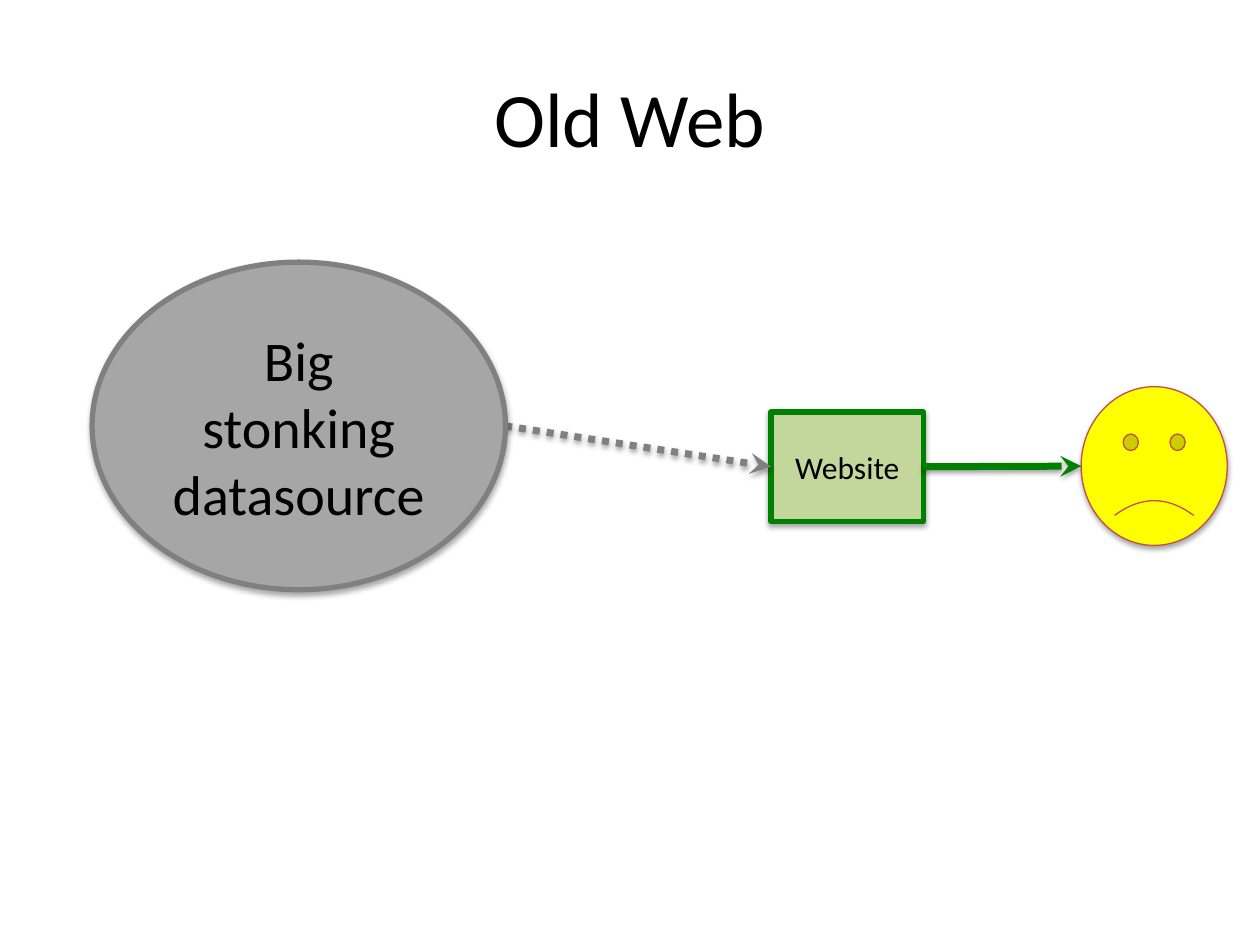
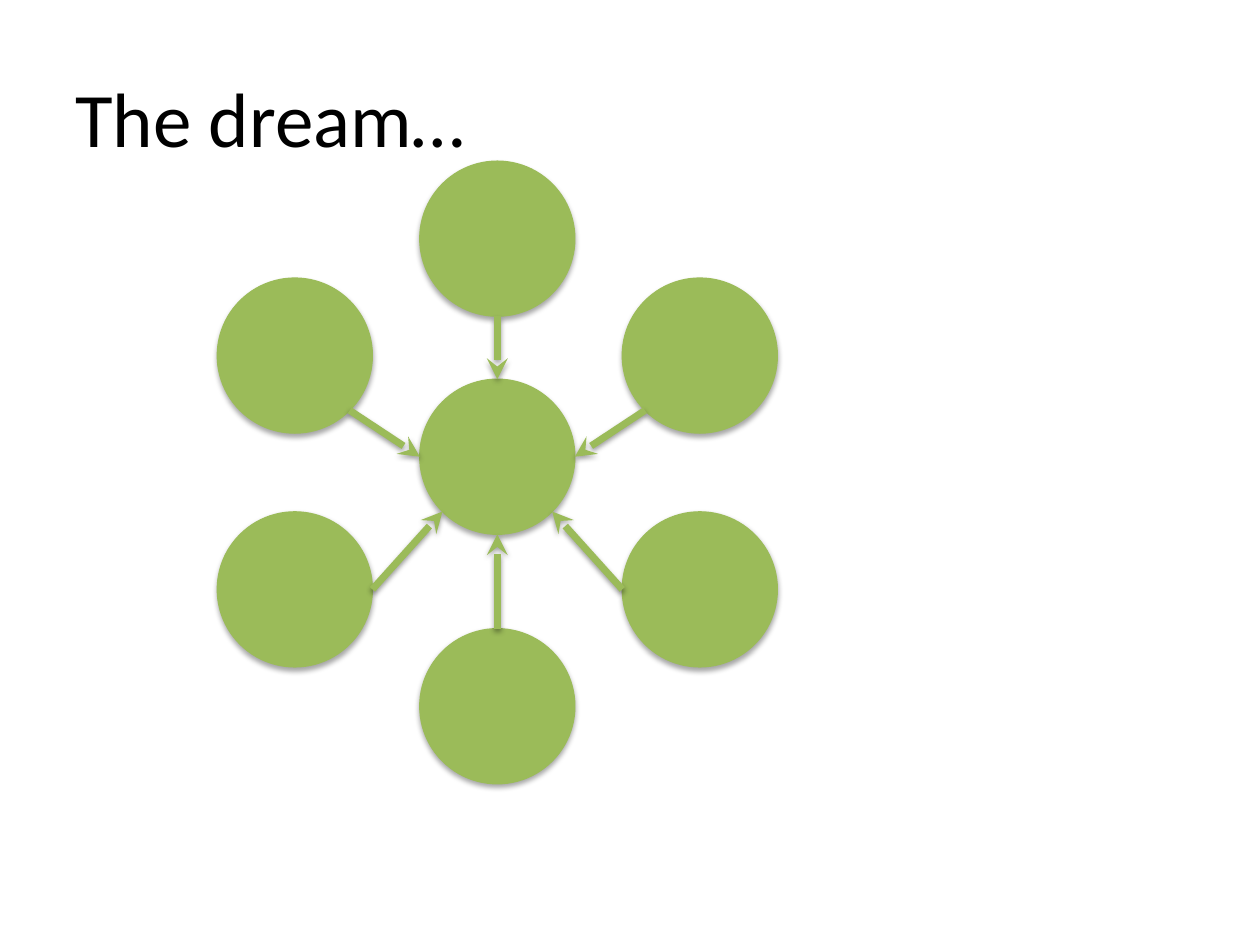
from math import cos, radians, sin

from lxml.etree import SubElement
from pptx import Presentation
from pptx.dml.color import RGBColor
from pptx.enum.dml import MSO_LINE
from pptx.enum.shapes import MSO_CONNECTOR, MSO_SHAPE
from pptx.enum.text import MSO_ANCHOR, PP_ALIGN
from pptx.oxml.ns import qn
from pptx.util import Pt

FONT = "Calibri"
COLORS = {
    "text": "000000",
    "source": "A6A6A6",
    "source_edge": "808080",
    "website": "C3D69B",
    "website_edge": "008000",
    "face": "FFFF00",
    "face_edge": "C0504D",
    "node": "9BBB59",
}

# Ring of nodes around a hub that sits a little above the ring's centre
RING_X, RING_Y, RING_RADIUS = 284.2, 270, 133.6
HUB = (RING_X, 261)
NODE_RADIUS = 44.3
# Clockwise degrees from the right: node on ring, arrow start on node, arrow end on hub
SPOKES = [
    (-90, 90, -90),
    (-30, 135, 0),
    (30, 180, 45),
    (90, -90, 90),
    (150, 0, 135),
    (210, 45, 180),
]


def color(name):
    return RGBColor.from_string(COLORS[name])


def point_on_circle(center, radius, angle):
    x, y = center
    return x + radius * cos(radians(angle)), y + radius * sin(radians(angle))


def add_shadow(shape, opacity, distance):
    """Give a shape or connector a soft shadow straight below it."""
    effects = SubElement(shape._element.spPr, qn("a:effectLst"))
    shadow = SubElement(effects, qn("a:outerShdw"), blurRad=str(Pt(3.1)),
                        dist=str(Pt(distance)), dir="5400000", rotWithShape="0")
    black = SubElement(shadow, qn("a:srgbClr"), val="000000")
    SubElement(black, qn("a:alpha"), val=str(opacity * 1000))


def write_text(shape, text, size, align=PP_ALIGN.CENTER):
    frame = shape.text_frame
    frame.word_wrap = True
    frame.vertical_anchor = MSO_ANCHOR.MIDDLE
    para = frame.paragraphs[0]
    para.alignment = align
    span = para.add_run()
    span.text = text
    span.font.name = FONT
    span.font.size = Pt(size)
    span.font.color.rgb = color("text")


def add_title(page, text, align=PP_ALIGN.CENTER):
    box = page.shapes.add_textbox(Pt(36), Pt(21.6), Pt(648), Pt(90))
    write_text(box, text, size=44, align=align)


def add_figure(page, kind, left, top, width, height, fill, edge, edge_width=0.75):
    figure = page.shapes.add_shape(kind, Pt(left), Pt(top), Pt(width), Pt(height))
    figure.fill.solid()
    figure.fill.fore_color.rgb = color(fill)
    figure.line.color.rgb = color(edge)
    figure.line.width = Pt(edge_width)
    add_shadow(figure, opacity=35, distance=1.8)
    return figure


def add_arrow(page, start, end, line, dash=None):
    arrow = page.shapes.add_connector(
        MSO_CONNECTOR.STRAIGHT, *(Pt(value) for value in (*start, *end)))
    arrow.line.color.rgb = color(line)
    arrow.line.width = Pt(4)
    if dash:
        arrow.line.dash_style = dash
    SubElement(arrow._element.spPr.find(qn("a:ln")), qn("a:tailEnd"), type="stealth")
    add_shadow(arrow, opacity=38, distance=1.6)
    return arrow


def add_node(page, center):
    x, y = center
    add_figure(page, MSO_SHAPE.OVAL, x - NODE_RADIUS, y - NODE_RADIUS,
               2 * NODE_RADIUS, 2 * NODE_RADIUS, fill="node", edge="node")


def build_old_web(page):
    add_title(page, "Old Web")

    # Visitor and website
    face = add_figure(page, MSO_SHAPE.SMILEY_FACE, 617.8, 221, 83.5, 90.7,
                      fill="face", edge="face_edge")
    face.adjustments[0] = -0.047
    website = add_figure(page, MSO_SHAPE.RECTANGLE, 440.6, 235.4, 87.1, 62.6,
                         fill="website", edge="website_edge", edge_width=3)
    write_text(website, "Website", size=18)

    # Flow from the source through the website to the visitor
    feed = add_arrow(page, (288.7, 243.4), (440.6, 266.7), "source_edge",
                     dash=MSO_LINE.ROUND_DOT)
    feed.end_connect(website, 1)
    visit = add_arrow(page, (527.7, 266.7), (617.8, 266.4), "website_edge")
    visit.begin_connect(website, 3)

    # Data source
    source = add_figure(page, MSO_SHAPE.OVAL, 52.6, 149.8, 236.2, 187.2,
                        fill="source", edge="source_edge", edge_width=3)
    write_text(source, "Big stonking datasource", size=32)


def build_dream(page):
    add_title(page, "The dream…", align=PP_ALIGN.LEFT)

    # Nodes
    centers = [point_on_circle((RING_X, RING_Y), RING_RADIUS, spoke[0])
               for spoke in SPOKES]
    for center in [*centers, HUB]:
        add_node(page, center)

    # Arrows into the hub
    for center, (_, leave, arrive) in zip(centers, SPOKES):
        add_arrow(page, point_on_circle(center, NODE_RADIUS, leave),
                  point_on_circle(HUB, NODE_RADIUS, arrive), "node")


def main():
    deck = Presentation()
    deck.slide_width, deck.slide_height = Pt(720), Pt(540)
    blank = deck.slide_layouts[6]
    for build in (build_old_web, build_dream):
        build(deck.slides.add_slide(blank))
    deck.save("out.pptx")


if __name__ == "__main__":
    main()
